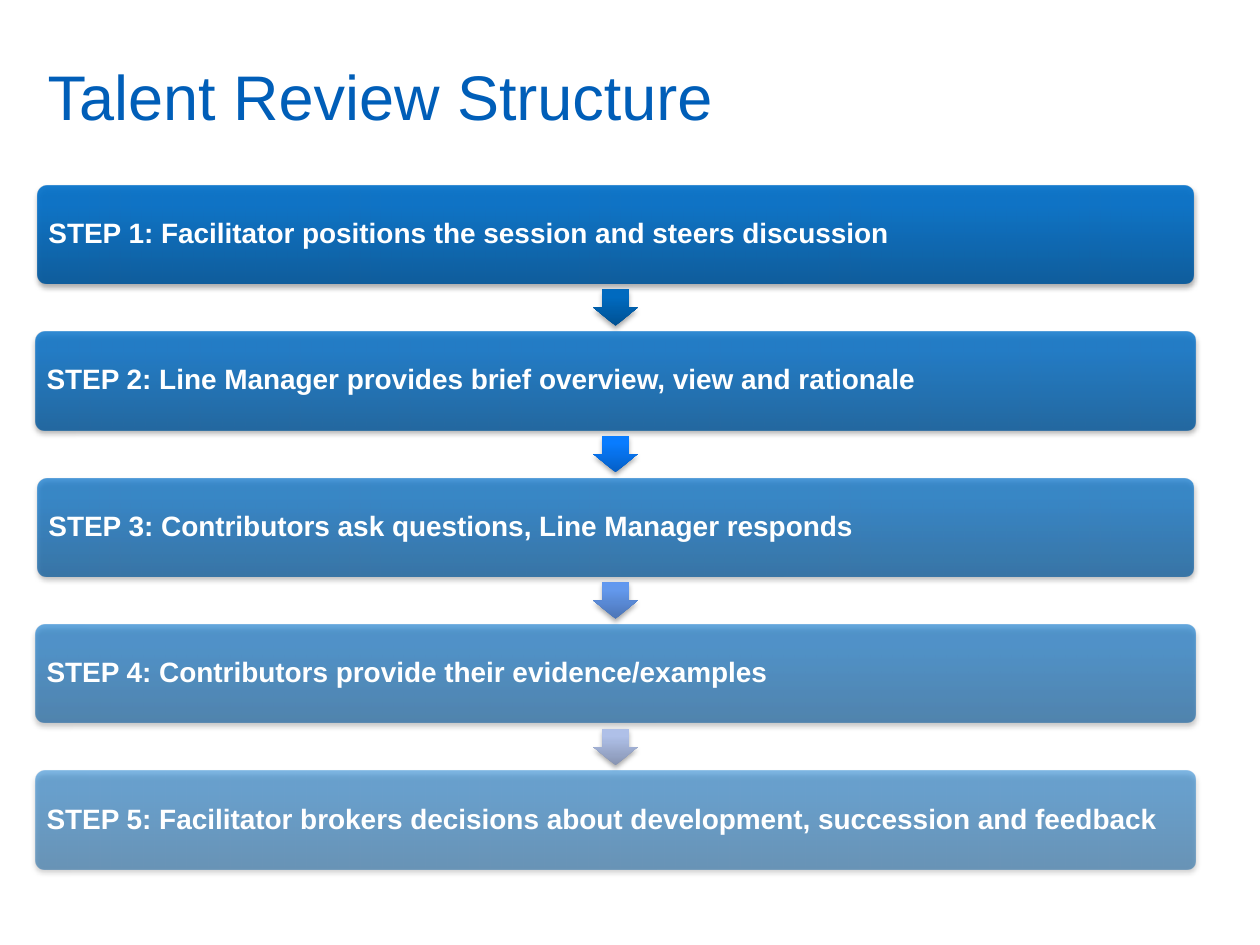
from lxml import etree
from pptx import Presentation
from pptx.dml.color import RGBColor
from pptx.enum.shapes import MSO_SHAPE
from pptx.enum.text import MSO_ANCHOR
from pptx.oxml.ns import qn
from pptx.util import Inches, Pt

ROUNDED = MSO_SHAPE.ROUNDED_RECTANGLE
ARROW = MSO_SHAPE.RIGHT_ARROW
MIDDLE = MSO_ANCHOR.MIDDLE

FONT = "Arial"
TITLE_BLUE = RGBColor(0x00, 0x5E, 0xB8)
WHITE = RGBColor(0xFF, 0xFF, 0xFF)
BLACK = RGBColor(0x00, 0x00, 0x00)
BAR_COLORS = (RGBColor(0x00, 0x55, 0x9A), RGBColor(0x00, 0x6E, 0xC8), RGBColor(0x00, 0x6F, 0xC9))
ARROW_COLORS = [
    (RGBColor(0x00, 0x51, 0x93), RGBColor(0x00, 0x6A, 0xBF), RGBColor(0x00, 0x6A, 0xC0)),
    (RGBColor(0x05, 0x5F, 0xC6), RGBColor(0x08, 0x7C, 0xFF), RGBColor(0x09, 0x7D, 0xFF)),
    (RGBColor(0x4C, 0x75, 0xB6), RGBColor(0x63, 0x98, 0xEC), RGBColor(0x61, 0x98, 0xF0)),
    (RGBColor(0x87, 0x94, 0xB2), RGBColor(0xAF, 0xC0, 0xE8), RGBColor(0xAF, 0xC1, 0xEA)),
]
STOPS = (0, 80, 100)

STEPS = [
    ("STEP 1: Facilitator positions the session and steers discussion", 9.18),
    ("STEP 2: Line Manager provides brief overview, view and rationale", 9.21),
    ("STEP 3: Contributors ask questions, Line Manager responds", 9.18),
    ("STEP 4: Contributors provide their evidence/examples", 9.21),
    ("STEP 5: Facilitator brokers decisions about development, succession and feedback", 9.21),
]
BAR_HEIGHT = 0.78
TEXT_MARGIN = 0.02
ARROW_LENGTH = 0.29
ARROW_BREADTH = 0.35


def add_color(parent, color, opacity):
    node = etree.SubElement(parent, qn("a:srgbClr"), val=str(color))
    if opacity < 100:
        etree.SubElement(node, qn("a:alpha"), val=str(opacity * 1000))


def style_shape(shape, colors, opacity=100):
    shape.line.fill.background()
    shape.fill.gradient()
    gradient = shape.element.spPr.find(qn("a:gradFill"))
    gradient.set("rotWithShape", "0")
    for child in list(gradient):
        gradient.remove(child)
    stops = etree.SubElement(gradient, qn("a:gsLst"))
    for position, color in zip(STOPS, colors):
        stop = etree.SubElement(stops, qn("a:gs"), pos=str(position * 1000))
        add_color(stop, color, opacity)
    etree.SubElement(gradient, qn("a:lin"), ang=str(270 * 60000), scaled="0")

    shape.shadow.inherit = False
    effects = shape.element.spPr.find(qn("a:effectLst"))
    shadow = etree.SubElement(
        effects, qn("a:outerShdw"), blurRad=str(Pt(3.1)), dist=str(Pt(1.8)),
        dir=str(90 * 60000), rotWithShape="0",
    )
    add_color(shadow, BLACK, 35)


def add_text(page, box, text, size, color, bold=False, inset=0.1, line_spacing=1.0):
    frame = page.shapes.add_textbox(*map(Inches, box)).text_frame
    frame.word_wrap = True
    frame.vertical_anchor = MIDDLE
    frame.margin_left = frame.margin_right = Inches(inset)
    frame.margin_top = frame.margin_bottom = Inches(min(inset, 0.07))
    para = frame.paragraphs[0]
    para.line_spacing = line_spacing
    span = para.add_run()
    span.text = text
    span.font.name = FONT
    span.font.size = Pt(size)
    span.font.bold = bold
    span.font.color.rgb = color


def add_step(page, box, text, opacity):
    left, top, width, height = box
    bar = page.shapes.add_shape(ROUNDED, *map(Inches, box))
    bar.adjustments[0] = 0.1
    style_shape(bar, BAR_COLORS, opacity)
    inner = (left + TEXT_MARGIN, top + TEXT_MARGIN,
             width - 2 * TEXT_MARGIN, height - 2 * TEXT_MARGIN)
    add_text(page, inner, text, 16, WHITE, bold=True, inset=0.07, line_spacing=0.9)


def add_arrow(page, center, middle, colors):
    arrow = page.shapes.add_shape(
        ARROW, Inches(center - ARROW_LENGTH / 2), Inches(middle - ARROW_BREADTH / 2),
        Inches(ARROW_LENGTH), Inches(ARROW_BREADTH),
    )
    arrow.rotation = 90
    arrow.adjustments[0] = 0.6
    arrow.adjustments[1] = 0.5
    style_shape(arrow, colors)


def add_process(page, box):
    left, top, width, height = box
    center = left + width / 2
    pitch = (height - BAR_HEIGHT) / (len(STEPS) - 1)
    for index, (text, bar_width) in enumerate(STEPS):
        bar_top = top + index * pitch
        bar_box = (center - bar_width / 2, bar_top, bar_width, BAR_HEIGHT)
        add_step(page, bar_box, text, 90 - 10 * index)
        if index < len(ARROW_COLORS):
            add_arrow(page, center, bar_top + (BAR_HEIGHT + pitch) / 2, ARROW_COLORS[index])


def main():
    deck = Presentation()
    deck.slide_width = Inches(10)
    deck.slide_height = Inches(7.5)
    page = deck.slides.add_slide(deck.slide_layouts[6])
    add_process(page, (0.28, 1.47, 9.21, 5.43))
    add_text(page, (0.28, 0.29, 9.07, 0.94), "Talent Review Structure", 36, TITLE_BLUE)
    deck.save("out.pptx")


if __name__ == "__main__":
    main()
